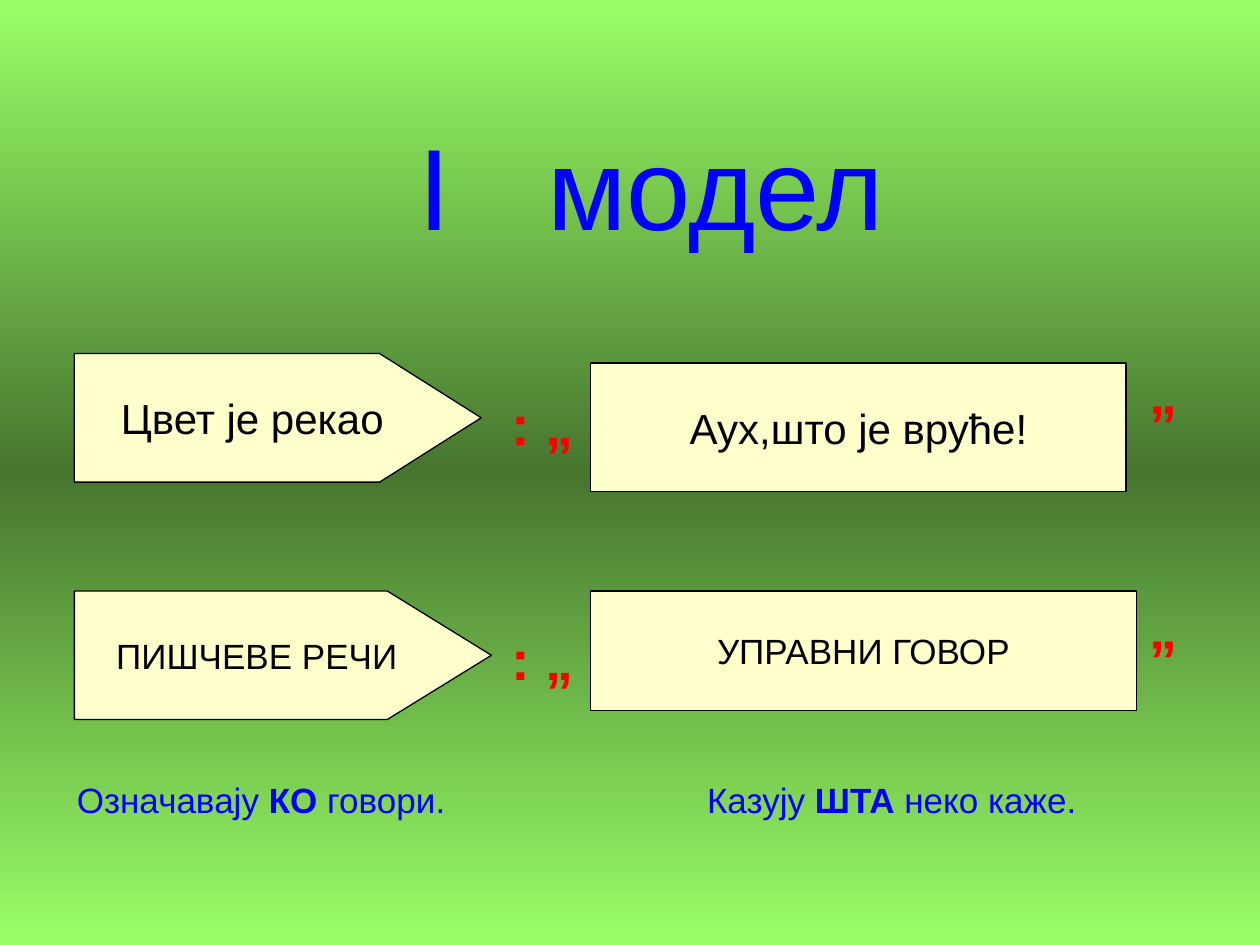
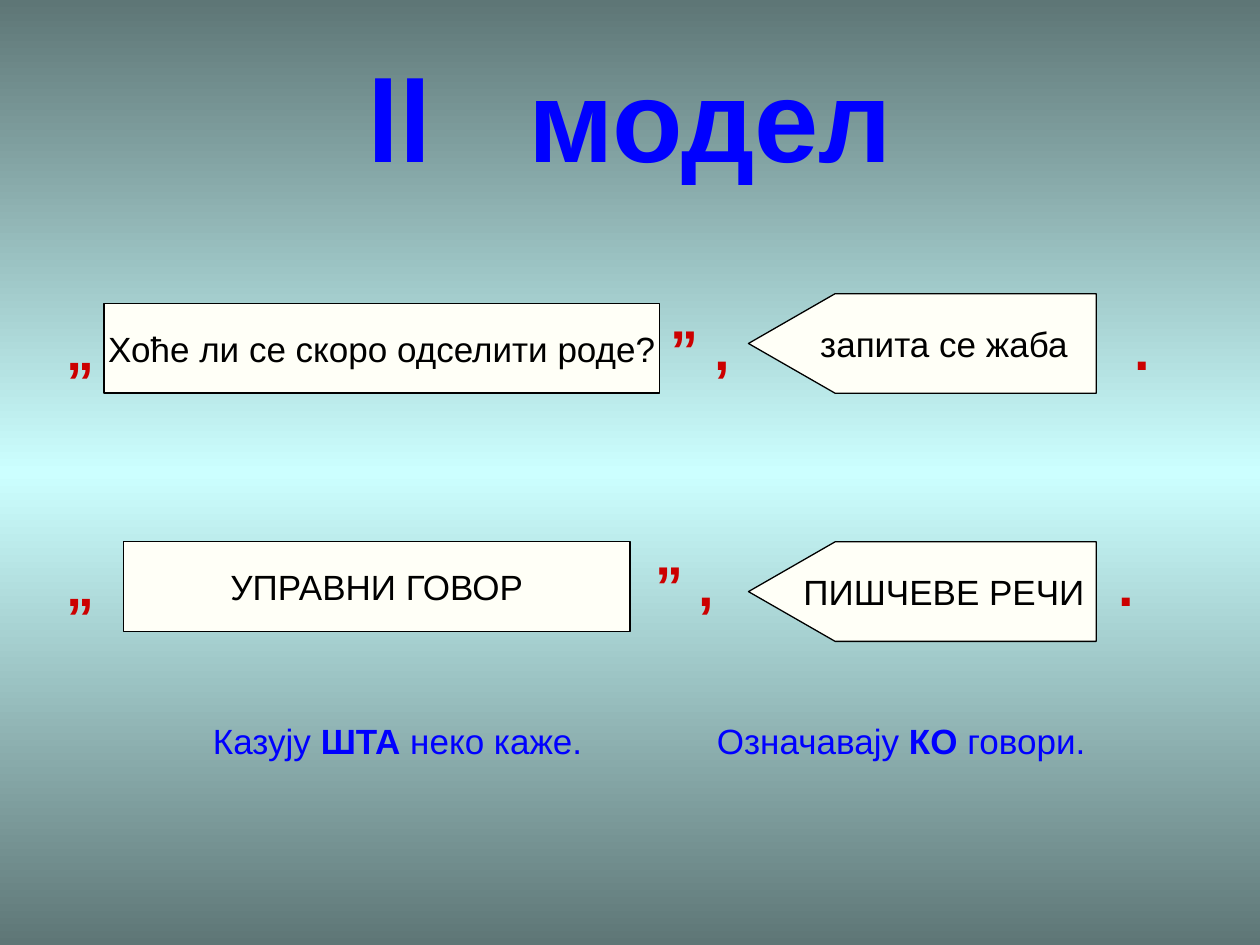
from copy import deepcopy

from lxml.etree import SubElement
from pptx import Presentation
from pptx.dml.color import RGBColor
from pptx.enum.shapes import MSO_SHAPE
from pptx.enum.text import MSO_ANCHOR, PP_ALIGN
from pptx.oxml.ns import qn
from pptx.util import Pt

BLUE = RGBColor(0x00, 0x00, 0xFF)
BLACK = RGBColor(0x00, 0x00, 0x00)
RED = RGBColor(0xFF, 0x00, 0x00)
DARK_RED = RGBColor(0xCC, 0x00, 0x00)
LIME = RGBColor(0x99, 0xFF, 0x66)
MOSS = RGBColor(0x47, 0x76, 0x2F)
SLATE = RGBColor(0x5E, 0x76, 0x76)
AQUA = RGBColor(0xCC, 0xFF, 0xFF)
CREAM = RGBColor(0xFF, 0xFF, 0xCC)
IVORY = RGBColor(0xFF, 0xFF, 0xF7)

TITLE = {"size": Pt(66), "color": BLUE}
CAPTION = {"size": Pt(20), "color": BLUE}
MARK = {"size": Pt(32), "bold": True}
SPEECH = "УПРАВНИ ГОВОР"
WRITER = "ПИШЧЕВЕ РЕЧИ"
WHO = "Означавају **КО** говори."
WHAT = "Казују **ШТА** неко каже."


class Deck:
    """Holds the shared style and the current slide."""

    font = "Arial"

    def __init__(self):
        self.prs = Presentation()
        self.prs.slide_width, self.prs.slide_height = Pt(720), Pt(540)

    def slide(self, edge, middle, box_fill):
        self.s = self.prs.slides.add_slide(self.prs.slide_layouts[5])
        self.box_fill = box_fill
        fill = self.s.background.fill
        fill.gradient()
        fill.gradient_angle = 90
        stops = self.s.element.xpath(".//p:bg//a:gsLst")[0]
        stops.append(deepcopy(stops[0]))
        colors = (edge, middle, edge)
        for stop, color, position in zip(fill.gradient_stops, colors, (0, 0.5, 1)):
            stop.color.rgb = color
            stop.position = position

    def run(self, p, text, style):
        r = p.add_run()
        r.text = text
        for name, value in {"name": self.font, **style}.items():
            if name == "color":
                r.font.color.rgb = value
            else:
                setattr(r.font, name, value)
        return r

    def title(self, words, x, y, bold=False):
        sp = self.s.shapes.title
        sp.left, sp.top, sp.width, sp.height = Pt(x), Pt(y), Pt(648), Pt(90)
        tf = sp.text_frame
        tf.vertical_anchor = MSO_ANCHOR.MIDDLE
        p = tf.paragraphs[0]
        p.alignment = PP_ALIGN.CENTER
        style = {**TITLE, "bold": bold}
        number, word = words
        self.run(p, number, style)
        # Wide gap between number and word
        gap = self.run(p, " ", style)
        gap.font._element.set("spc", "3670")
        self.run(p, word, style)

    def box(self, text, x, y, w, h, size=20, point=None, left=False):
        kind = MSO_SHAPE.PENTAGON if point else MSO_SHAPE.RECTANGLE
        sp = self.s.shapes.add_shape(kind, Pt(x), Pt(y), Pt(w), Pt(h))
        sp.shadow.inherit = False
        sp.fill.solid()
        sp.fill.fore_color.rgb = self.box_fill
        sp.line.color.rgb = BLACK
        sp.line.width = Pt(0.75)
        tf = sp.text_frame
        tf.word_wrap = False
        tf.vertical_anchor = MSO_ANCHOR.MIDDLE
        if point:
            sp.adjustments[0] = point
        if left:
            # Turn the arrow but keep its text upright
            sp.rotation = 180
            tf._txBody.bodyPr.set("rot", "10800000")
        p = tf.paragraphs[0]
        p.alignment = PP_ALIGN.CENTER
        self.run(p, text, {"size": Pt(size), "color": BLACK})

    def row(self, y, pieces, style):
        """One line of text; each piece starts at its own x."""
        start = pieces[0][0]
        sp = self.s.shapes.add_textbox(Pt(start), Pt(y), Pt(710 - start), style["size"] * 1.15)
        tf = sp.text_frame
        tf.word_wrap = True
        for side in ("left", "top", "right", "bottom"):
            setattr(tf, f"margin_{side}", 0)
        p = tf.paragraphs[0]
        tabs = SubElement(p._p.get_or_add_pPr(), qn("a:tabLst"))
        for i, (x, text) in enumerate(pieces):
            if i:
                SubElement(tabs, qn("a:tab"), pos=str(Pt(x - start)), algn="l")
                text = "\t" + text
            for j, part in enumerate(text.split("**")):
                self.run(p, part, {"bold": j % 2 == 1, **style})


def main():
    deck = Deck()

    # First model: writer's words, then speech
    deck.slide(LIME, MOSS, CREAM)
    deck.title(("I", "модел"), 48.2, 60.5)
    for y in (222.4, 356.7):
        deck.row(y, [(292.2, ": „"), (656.8, "”")], {**MARK, "color": RED})
    deck.box("Цвет је рекао", 42.5, 202, 232.5, 73.5, size=24, point=0.79)
    deck.box(WRITER, 42.5, 337.7, 238.3, 73.5, point=0.81)
    deck.box("Аух,што је вруће!", 337.5, 207.5, 306, 73.5, size=24)
    deck.box(SPEECH, 337.5, 337.7, 311.8, 68.4)
    deck.row(445, [(43.9, WHO), (404, WHAT)], CAPTION)

    # Second model: speech, then writer's words
    deck.slide(SLATE, AQUA, IVORY)
    deck.title(("ll", "модел"), 36, 21.6, bold=True)
    for y, close in ((180, 383.2), (314.4, 374.3)):
        marks = [(38.2, "„"), (close, "” ,"), (close + 265, ".")]
        deck.row(y, marks, {**MARK, "color": DARK_RED})
    deck.box(SPEECH, 70.6, 309.6, 289.4, 51.1)
    deck.box("Хоће ли се скоро одселити роде?", 59.5, 173.5, 317.5, 51.1)
    for text, y in (("запита се жаба", 167.8), (WRITER, 309.6)):
        deck.box(text, 427.7, y, 198.7, 56.9, point=0.87, left=True)
    deck.row(411, [(121.7, WHAT), (409.7, WHO)], CAPTION)

    deck.prs.save("out.pptx")


if __name__ == "__main__":
    main()
